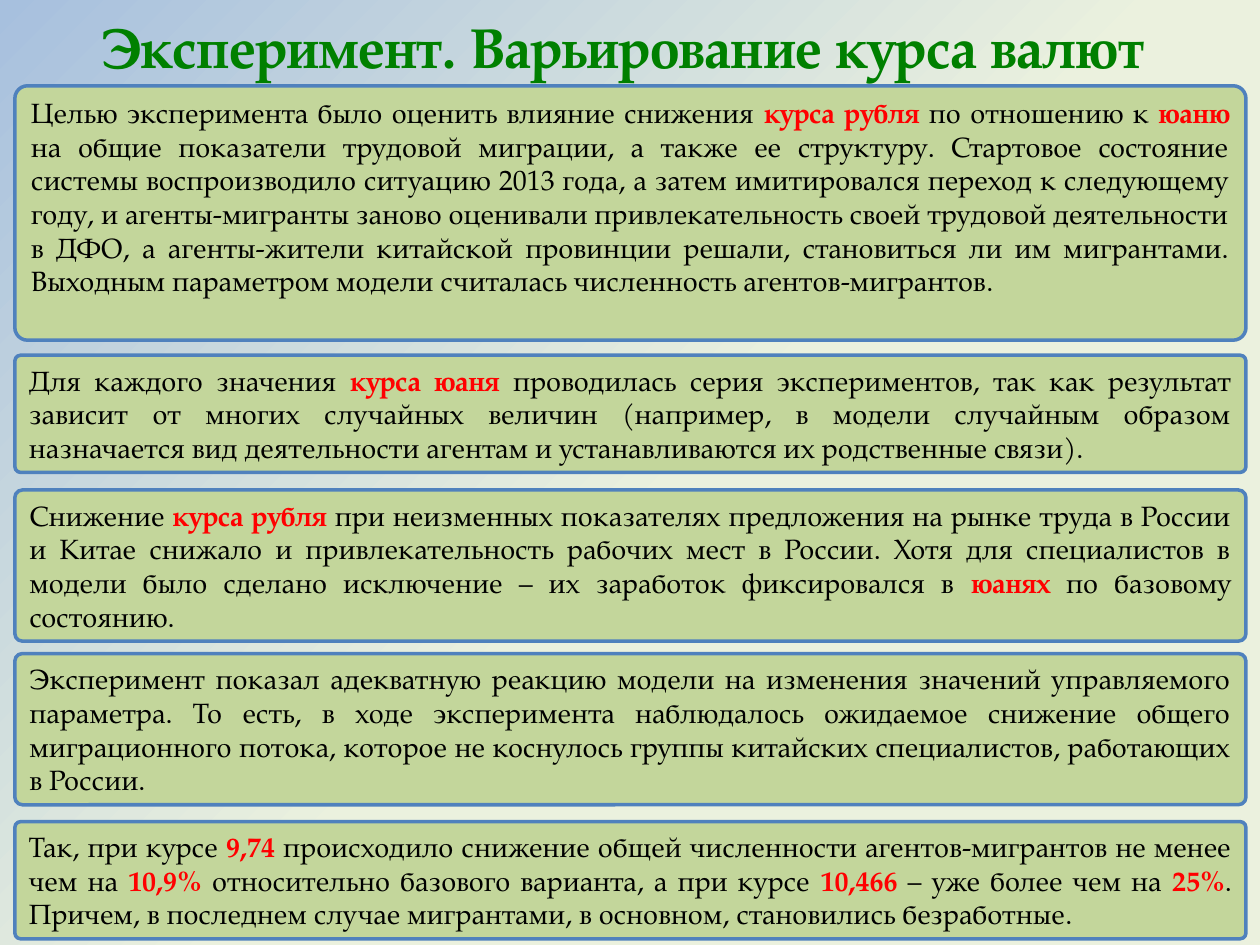
from dataclasses import dataclass

from pptx import Presentation
from pptx.dml.color import RGBColor
from pptx.enum import shapes, text
from pptx.util import Pt


@dataclass(frozen=True)
class Theme:
    font: str = "TeX Gyre Pagella"
    title_size: int = 32
    body_size: int = 16
    title: str = "008000"
    body: str = "000000"
    emphasis: str = "FF0000"
    panel: str = "C3D69B"
    outline: str = "4F81BD"
    gradient: tuple = ((0, "A7C0DE"), (0.53, "EBF1DE"))


THEME = Theme()
TITLE = "Эксперимент. Варьирование курса валют"
PANELS = [
    (49, 145.4,
     "Целью эксперимента было оценить влияние снижения *курса рубля* по отношению к *юаню* "
     "на общие показатели трудовой миграции, а также ее структуру. Стартовое состояние "
     "системы воспроизводило ситуацию 2013 года, а затем имитировался переход к следующему "
     "году, и агенты-мигранты заново оценивали привлекательность своей трудовой деятельности "
     "в ДФО, а агенты-жители китайской провинции решали, становиться ли им мигрантами. "
     "Выходным параметром модели считалась численность агентов-мигрантов."),
    (203, 67,
     "Для каждого значения *курса юаня* проводилась серия экспериментов, так как результат "
     "зависит от многих случайных величин (например, в модели случайным образом "
     "назначается вид деятельности агентам и устанавливаются их родственные связи)."),
    (280, 86.4,
     "Снижение *курса рубля* при неизменных показателях предложения на рынке труда в России "
     "и Китае снижало и привлекательность рабочих мест в России. Хотя для специалистов в "
     "модели было сделано исключение – их заработок фиксировался в *юанях* по базовому "
     "состоянию."),
    (373.5, 86.4,
     "Эксперимент показал адекватную реакцию модели на изменения значений управляемого "
     "параметра. То есть, в ходе эксперимента наблюдалось ожидаемое снижение общего "
     "миграционного потока, которое не коснулось группы китайских специалистов, работающих "
     "в России."),
    (469.5, 67,
     "Так, при курсе *9,74* происходило снижение общей численности агентов-мигрантов не менее "
     "чем на *10,9%* относительно базового варианта, а при курсе *10,466* – уже более чем на "
     "*25%*. Причем, в последнем случае мигрантами, в основном, становились безработные."),
]


def write_text(shape, content, *, size, color, align, bold=False):
    frame = shape.text_frame
    frame.word_wrap = True
    frame.auto_size = text.MSO_AUTO_SIZE.NONE
    frame.vertical_anchor = text.MSO_ANCHOR.TOP
    paragraph = frame.paragraphs[0]
    paragraph.alignment = align
    paragraph.space_before = Pt(0)
    for index, part in enumerate(content.split("*")):
        if not part:
            continue
        emphasized = index % 2 == 1
        run = paragraph.add_run()
        run.text = part
        run.font.name = THEME.font
        run.font.size = Pt(size)
        run.font.bold = bold or emphasized
        run.font.color.rgb = RGBColor.from_string(THEME.emphasis if emphasized else color)


def paint_background(slide):
    fill = slide.background.fill
    fill.gradient()
    fill.gradient_angle = 315
    for stop, (position, color) in zip(fill.gradient_stops, THEME.gradient):
        stop.position = position
        stop.color.rgb = RGBColor.from_string(color)


def place_title(slide, left, top, width, height):
    title = slide.shapes.title
    title.left, title.top, title.width, title.height = map(Pt, (left, top, width, height))
    write_text(title, TITLE, size=THEME.title_size, color=THEME.title,
               align=text.PP_ALIGN.CENTER, bold=True)


def add_panel(slide, content, left, top, width, height):
    panel = slide.shapes.add_shape(shapes.MSO_SHAPE.ROUNDED_RECTANGLE,
                                   *map(Pt, (left, top, width, height)))
    panel.adjustments[0] = 0.05
    panel.shadow.inherit = False
    panel.fill.solid()
    panel.fill.fore_color.rgb = RGBColor.from_string(THEME.panel)
    panel.line.color.rgb = RGBColor.from_string(THEME.outline)
    panel.line.width = Pt(2)
    write_text(panel, content, size=THEME.body_size, color=THEME.body,
               align=text.PP_ALIGN.JUSTIFY)


def main():
    presentation = Presentation()
    presentation.slide_width, presentation.slide_height = Pt(720), Pt(540)
    slide = presentation.slides.add_slide(presentation.slide_layouts[5])
    paint_background(slide)
    place_title(slide, 0, 3.6, 712, 46)
    for top, height, content in PANELS:
        add_panel(slide, content, 8.5, top, 703.5, height)
    presentation.save("out.pptx")


if __name__ == "__main__":
    main()
